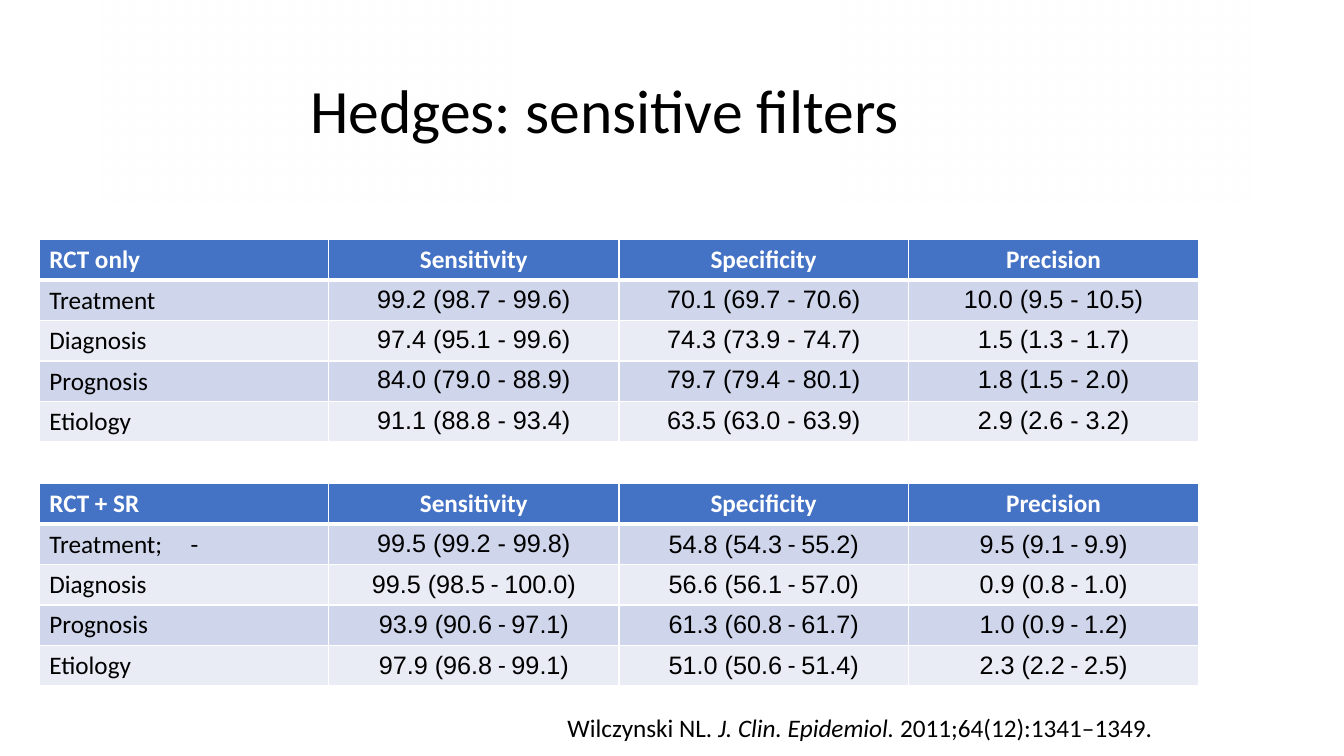
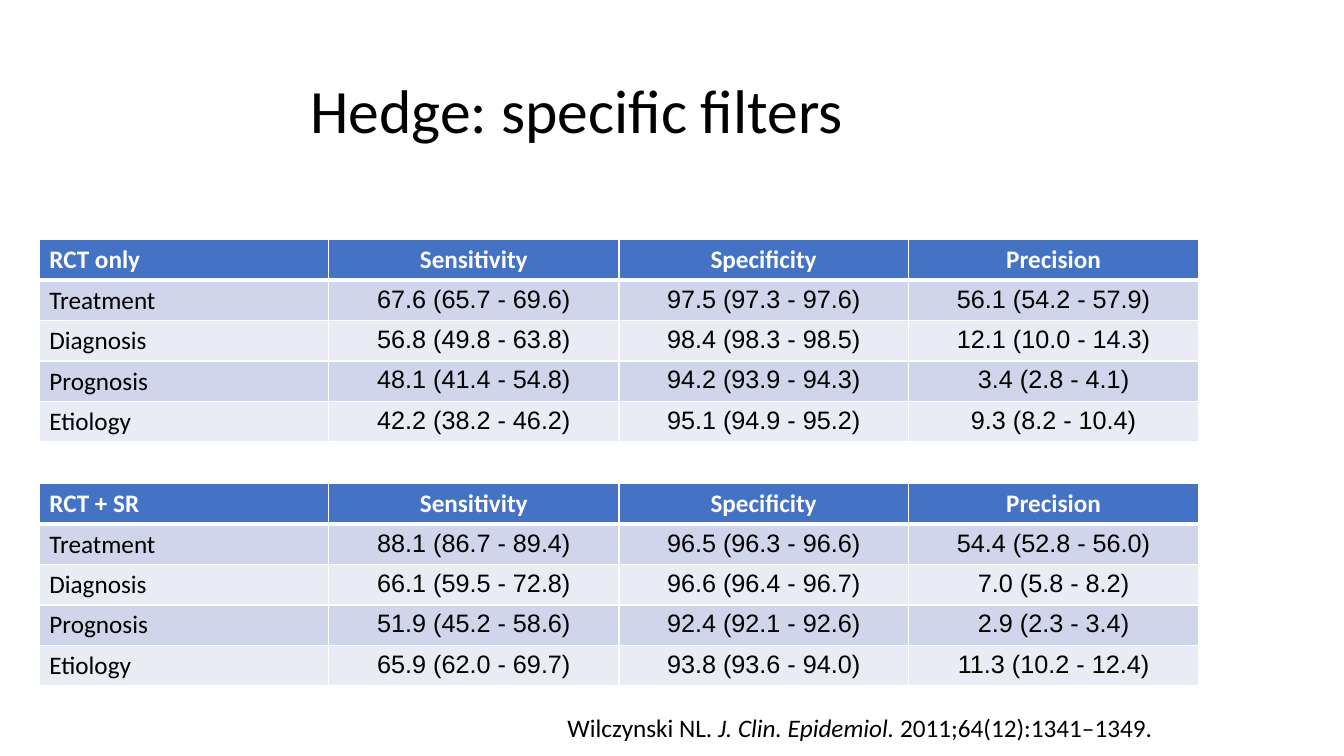
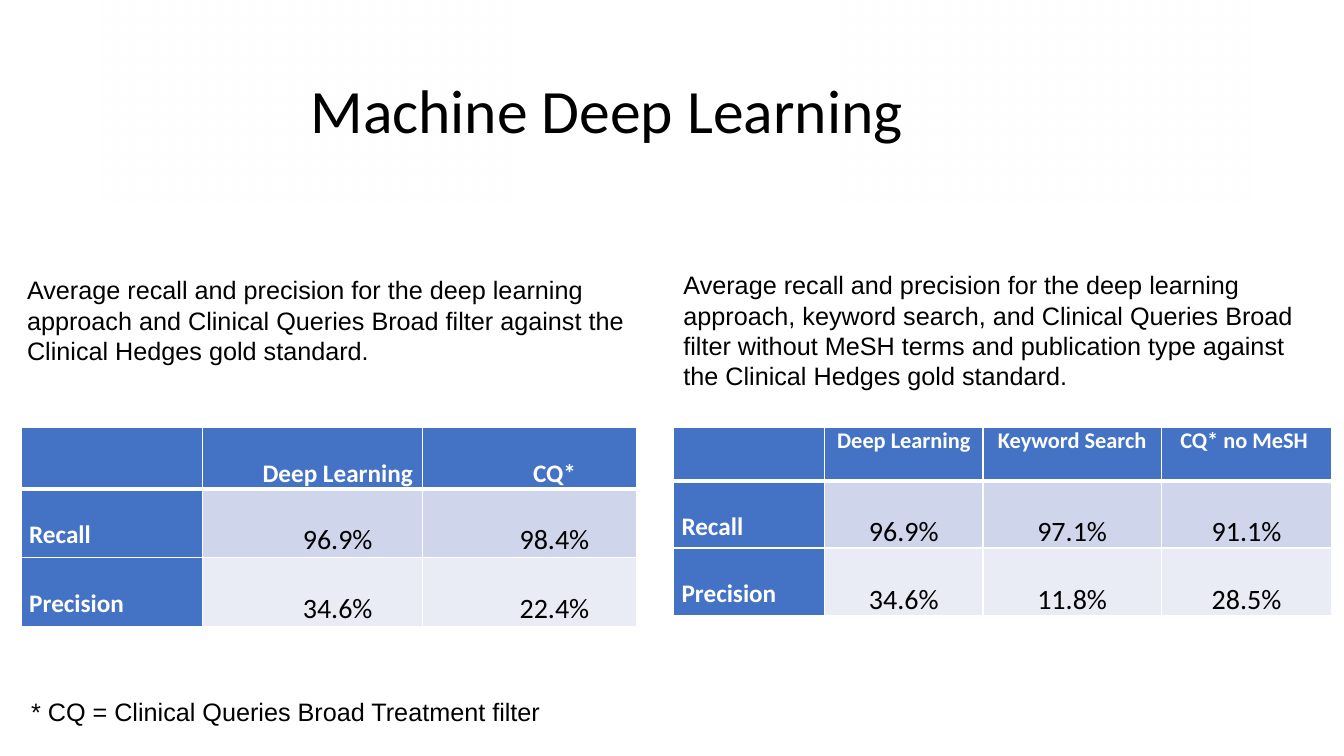
from dataclasses import dataclass

from lxml import etree
from pptx import Presentation
from pptx import slide as sld
from pptx import table as tbl
from pptx import util as u
from pptx.dml import color as clr
from pptx.enum import shapes as se
from pptx.enum import text as te
from pptx.oxml import ns
from pptx.text import text as tx

EMU_PER_PX = 9144
BLACK, WHITE, BLUE = "000000", "FFFFFF", "4472C4"
BANDS = ("CFD5EA", "E9EBF5")
BODY, DATA = "Calibri", "Arial"
LEFT, CENTER = te.PP_ALIGN.LEFT, te.PP_ALIGN.CENTER
TOP, MIDDLE = te.MSO_ANCHOR.TOP, te.MSO_ANCHOR.MIDDLE
MEASURES = ("Sensitivity", "Specificity", "Precision")
DASH_TAB = 140

Rows = tuple[tuple[str, ...], ...]


@dataclass(frozen=True)
class Veil:
    x: int
    rotation: int
    stops: tuple[tuple[int, int], ...]


@dataclass(frozen=True)
class Look:
    head_size: int = 18
    head_spacing: float = 1.0
    body_size: int = 18
    body_font: str = DATA
    body_spacing: float = 1.0
    label_indent: int = 0
    indent: int = 0
    margins: tuple[int, int] = (10, 5)
    blue_labels: bool = False


@dataclass(frozen=True)
class Grid:
    x: int
    y: int
    cols: tuple[int, ...]
    heights: tuple[int, ...]
    rows: Rows
    look: Look


@dataclass(frozen=True)
class Box:
    x: int
    y: int
    w: int
    h: int
    text: str
    font: str = DATA
    size: int = 18
    anchor: te.MSO_ANCHOR = TOP
    spacing: float = 1.0
    wrap: bool = True


@dataclass(frozen=True)
class Page:
    title: str
    grids: tuple[Grid, ...]
    boxes: tuple[Box, ...]


VEILS = (
    Veil(99, 0, ((18, 26), (29, 39), (45, 100))),
    Veil(832, 180, ((18, 16), (29, 42), (44, 100))),
)


def px(n: int) -> u.Emu:
    return u.Emu(n * EMU_PER_PX)


def rgb(code: str) -> clr.RGBColor:
    return clr.RGBColor.from_string(code)


def write(p: tx._Paragraph, text: str, *, font: str = BODY, size: int = 18, color: str = BLACK,
          bold: bool = False, italic: bool = False) -> None:
    r = p.add_run()
    r.text = text
    r.font.name = font
    r.font.size = u.Pt(size)
    r.font.bold = bold
    r.font.italic = italic
    r.font.color.rgb = rgb(color)


def add_veil(s: sld.Slide, veil: Veil) -> None:
    sp = s.shapes.add_shape(se.MSO_SHAPE.RECTANGLE, px(veil.x), px(1), px(410), px(201))
    sp.shadow.inherit = False
    sp.rotation = veil.rotation
    sp.line.fill.background()
    sp.fill.gradient()
    sp.fill.gradient_angle = 0
    stops = sp._element.spPr.find(ns.qn("a:gradFill")).find(ns.qn("a:gsLst"))
    for stop in list(stops):
        stops.remove(stop)
    for position, opacity in veil.stops:
        stop = etree.SubElement(stops, ns.qn("a:gs"), pos=str(position * 1000))
        tint = etree.SubElement(stop, ns.qn("a:srgbClr"), val=WHITE)
        etree.SubElement(tint, ns.qn("a:alpha"), val=str(opacity * 1000))


def set_borders(cell: tbl._Cell, top: int, bottom: int) -> None:
    props = cell._tc.get_or_add_tcPr()
    for i, (side, points) in enumerate((("L", 1), ("R", 1), ("T", top), ("B", bottom))):
        ln = etree.Element(ns.qn(f"a:ln{side}"), w=str(u.Pt(points)))
        fill = etree.SubElement(ln, ns.qn("a:solidFill"))
        etree.SubElement(fill, ns.qn("a:srgbClr"), val=WHITE)
        props.insert(i, ln)


def set_tab(p: tx._Paragraph, position: int) -> None:
    tabs = etree.SubElement(p._p.get_or_add_pPr(), ns.qn("a:tabLst"))
    etree.SubElement(tabs, ns.qn("a:tab"), pos=str(px(position)), algn="l")


def fill_cell(cell: tbl._Cell, text: str, row: int, col: int, look: Look) -> None:
    head, label = row == 0, col == 0
    blue = head or (label and look.blue_labels)
    cell.fill.solid()
    cell.fill.fore_color.rgb = rgb(BLUE if blue else BANDS[(row - 1) % 2])
    set_borders(cell, 3 if row == 1 else 1, 3 if head else 1)
    if not text:
        return
    side, edge = look.margins
    cell.margin_left = cell.margin_right = px(side)
    cell.margin_top = cell.margin_bottom = px(edge)
    p = cell.text_frame.paragraphs[0]
    p.alignment = LEFT if label else CENTER
    p.line_spacing = look.head_spacing if head else look.body_spacing
    indent = look.label_indent if label else look.indent
    if indent:
        p._p.get_or_add_pPr().set("indent", str(px(indent)))
    if "\t" in text:
        set_tab(p, DASH_TAB)
    size = look.head_size if head else 18 if label else look.body_size
    font = BODY if head or label else look.body_font
    for i, part in enumerate(text.split("|")):
        write(p, part, font=BODY if i % 2 else font, size=size,
              color=WHITE if blue else BLACK, bold=blue)


def add_grid(s: sld.Slide, grid: Grid) -> None:
    frame = s.shapes.add_table(len(grid.rows), len(grid.cols), px(grid.x), px(grid.y),
                               px(sum(grid.cols)), px(sum(grid.heights)))
    table = frame.table
    for column, width in zip(table.columns, grid.cols):
        column.width = px(width)
    for row, height in zip(table.rows, grid.heights):
        row.height = px(height)
    for i, texts in enumerate(grid.rows):
        for j, text in enumerate(texts):
            fill_cell(table.cell(i, j), text, i, j, grid.look)


def add_box(s: sld.Slide, box: Box) -> None:
    sp = s.shapes.add_textbox(px(box.x), px(box.y), px(box.w), px(box.h))
    tf = sp.text_frame
    tf.word_wrap = box.wrap
    tf.vertical_anchor = box.anchor
    p = tf.paragraphs[0]
    p.line_spacing = box.spacing
    for i, part in enumerate(box.text.split("|")):
        write(p, part, font=box.font, size=box.size, italic=i % 2 == 1)


def add_page(prs: Presentation, page: Page) -> None:
    s = prs.slides.add_slide(prs.slide_layouts[6])
    for veil in VEILS:
        add_veil(s, veil)
    add_box(s, Box(298, 40, 740, 145, page.title, BODY, 44, MIDDLE, 0.9))
    for grid in page.grids:
        add_grid(s, grid)
    for box in page.boxes:
        add_box(s, box)


def filter_page(title: str, rct: Rows, rct_sr: Rows) -> Page:
    grids = tuple(
        Grid(39, y, (287, 288) * 2, (40,) * 5, ((name, *MEASURES), *rows), Look())
        for y, name, rows in ((238, "RCT only", rct), (480, "RCT + SR", rct_sr))
    )
    return Page(title, grids, (CITATION,))


CITATION = Box(553, 702, 667, 40,
               "Wilczynski NL. |J. Clin. Epidemiol.| 2011;64(12):1341–1349.", BODY)

SENSITIVE = filter_page(
    "Hedges: sensitive filters",
    (
        ("Treatment", "99.2 (98.7 - 99.6)", "70.1 (69.7 - 70.6)", "10.0 (9.5 - 10.5)"),
        ("Diagnosis", "97.4 (95.1 - 99.6)", "74.3 (73.9 - 74.7)", "1.5 (1.3 - 1.7)"),
        ("Prognosis", "84.0 (79.0 - 88.9)", "79.7 (79.4 - 80.1)", "1.8 (1.5 - 2.0)"),
        ("Etiology", "91.1 (88.8 - 93.4)", "63.5 (63.0 - 63.9)", "2.9 (2.6 - 3.2)"),
    ),
    (
        ("Treatment;\t-", "99.5 (99.2 - 99.8)", "54.8 (54.3| - |55.2)", "9.5 (9.1| - |9.9)"),
        ("Diagnosis", "99.5 (98.5| - |100.0)", "56.6 (56.1| - |57.0)", "0.9 (0.8| - |1.0)"),
        ("Prognosis", "93.9 (90.6| - |97.1)", "61.3 (60.8| - |61.7)", "1.0 (0.9| - |1.2)"),
        ("Etiology", "97.9 (96.8| - |99.1)", "51.0 (50.6| - |51.4)", "2.3 (2.2| - |2.5)"),
    ),
)

SPECIFIC = filter_page(
    "Hedge: specific filters",
    (
        ("Treatment", "67.6 (65.7 - 69.6)", "97.5 (97.3 - 97.6)", "56.1 (54.2 - 57.9)"),
        ("Diagnosis", "56.8 (49.8 - 63.8)", "98.4 (98.3 - 98.5)", "12.1 (10.0 - 14.3)"),
        ("Prognosis", "48.1 (41.4 - 54.8)", "94.2 (93.9 - 94.3)", "3.4 (2.8 - 4.1)"),
        ("Etiology", "42.2 (38.2 - 46.2)", "95.1 (94.9 - 95.2)", "9.3 (8.2 - 10.4)"),
    ),
    (
        ("Treatment", "88.1 (86.7 - 89.4)", "96.5 (96.3 - 96.6)", "54.4 (52.8 - 56.0)"),
        ("Diagnosis", "66.1 (59.5 - 72.8)", "96.6 (96.4 - 96.7)", "7.0 (5.8 - 8.2)"),
        ("Prognosis", "51.9 (45.2 - 58.6)", "92.4 (92.1 - 92.6)", "2.9 (2.3 - 3.4)"),
        ("Etiology", "65.9 (62.0 - 69.7)", "93.8 (93.6 - 94.0)", "11.3 (10.2 - 12.4)"),
    ),
)

LEARNING = Page(
    "Machine Deep Learning",
    (
        Grid(21, 424, (180, 218, 212), (61, 68, 69), (
            ("", "Deep Learning", "CQ*"),
            ("Recall", "96.9%", "98.4%"),
            ("Precision", "34.6%", "22.4%"),
        ), Look(18, 2.0, 20, BODY, 2.0, 1, 50, (7, 0), True)),
        Grid(668, 424, (150, 157, 177, 169), (53, 66, 66), (
            ("", "Deep Learning", "Keyword Search", "CQ* no MeSH "),
            ("Recall", "96.9%", "97.1%", "91.1%"),
            ("Precision", "34.6%", "11.8%", "28.5%"),
        ), Look(16, 1.0, 20, BODY, 2.0, 1, 0, (7, 0), True)),
    ),
    (
        Box(17, 267, 643, 101,
            "Average recall and precision for the deep learning approach and Clinical Queries "
            "Broad filter against the Clinical Hedges gold standard.", anchor=MIDDLE),
        Box(668, 262, 653, 131,
            "Average recall and precision for the deep learning approach, keyword search, and "
            "Clinical Queries Broad filter without MeSH terms and publication type against the "
            "Clinical Hedges gold standard.", anchor=MIDDLE),
        Box(21, 686, 530, 40, "* CQ = Clinical Queries Broad Treatment filter", wrap=False),
    ),
)


def main() -> None:
    prs = Presentation()
    prs.slide_width, prs.slide_height = px(1333), px(750)
    for page in (SENSITIVE, SPECIFIC, LEARNING):
        add_page(prs, page)
    prs.save("out.pptx")


if __name__ == "__main__":
    main()
